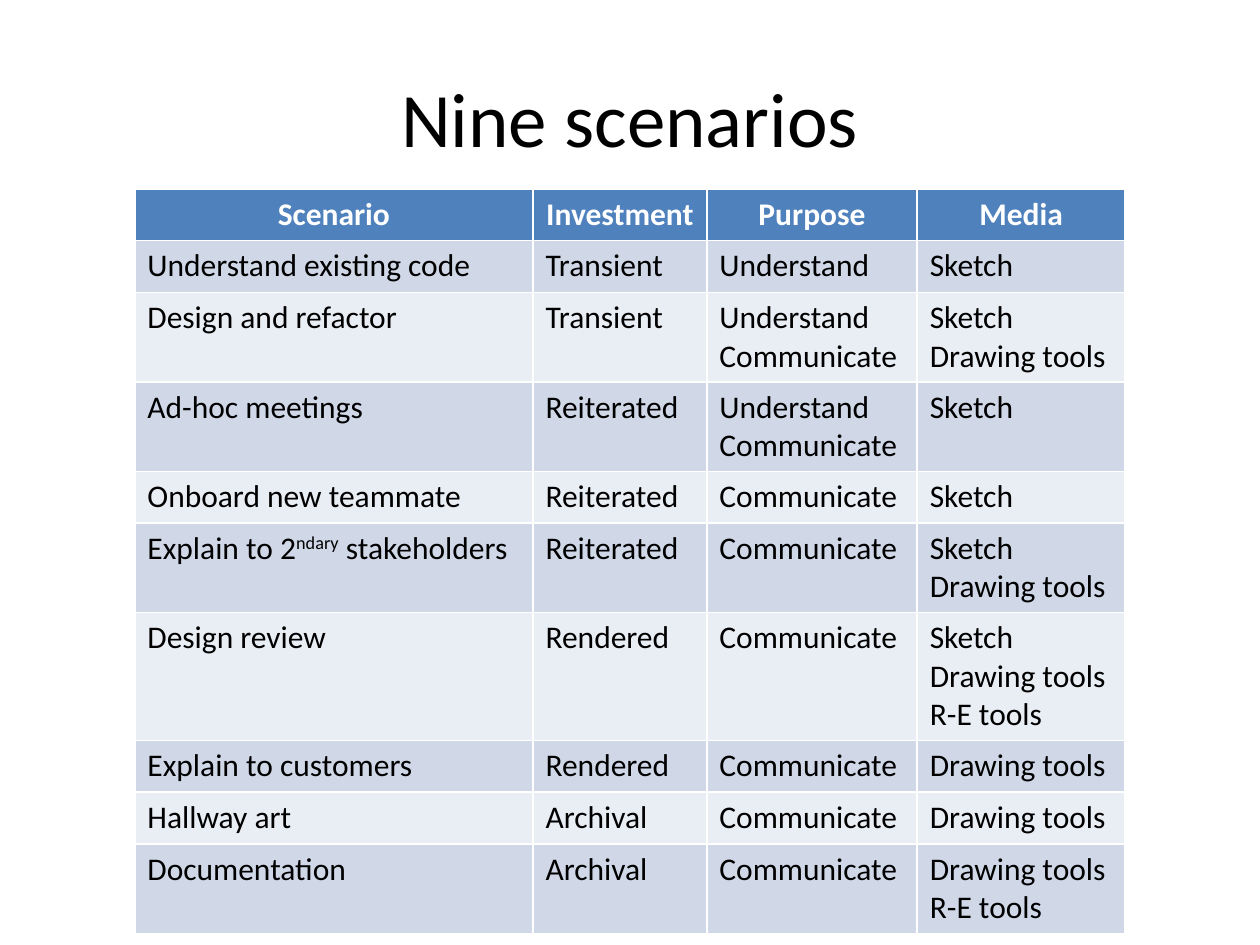
from pptx import Presentation
from pptx import util as u
from pptx.dml.color import RGBColor
from pptx.enum import text

FONT = "Calibri"
BLACK, WHITE, HEADER_FILL = "000000", "FFFFFF", "4F81BD"
BAND_FILLS = ("D0D8E8", "E9EDF4")
COLUMN_WIDTHS = (3.16, 1.38, 1.67, 1.65)
ROW_HEIGHT = 0.41

# "\n" starts a paragraph, "\v" breaks a line, "^" encloses superscript
HEADERS = ("Scenario", "Investment", "Purpose", "Media")
SCENARIOS = (
    ("Understand existing code", "Transient", "Understand", "Sketch"),
    ("Design and refactor", "Transient", "Understand\nCommunicate", "Sketch\vDrawing tools"),
    ("Ad-hoc meetings", "Reiterated", "Understand\nCommunicate", "Sketch"),
    ("Onboard new teammate", "Reiterated", "Communicate", "Sketch"),
    ("Explain to 2^ndary^ stakeholders", "Reiterated", "Communicate", "Sketch\nDrawing tools"),
    ("Design review", "Rendered", "Communicate", "Sketch\nDrawing tools\nR-E tools"),
    ("Explain to customers", "Rendered", "Communicate", "Drawing tools"),
    ("Hallway art", "Archival", "Communicate", "Drawing tools"),
    ("Documentation", "Archival", "Communicate", "Drawing tools\nR-E tools"),
)


def rgb(value):
    return RGBColor.from_string(value)


def style_paragraph(paragraph, size, color, bold=False, centered=False):
    font = paragraph.font
    font.name, font.size, font.bold = FONT, u.Pt(size), bold
    font.color.rgb = rgb(color)
    paragraph.alignment = text.PP_ALIGN.CENTER if centered else text.PP_ALIGN.LEFT


def add_superscript_runs(paragraph, content):
    paragraph.clear()
    for index, part in enumerate(content.split("^")):
        run = paragraph.add_run()
        run.text = part
        if index % 2:
            run._r.get_or_add_rPr().set("baseline", "30000")


def fill_cell(cell, content, fill, color, header):
    cell.fill.solid()
    cell.fill.fore_color.rgb = rgb(fill)
    cell.text_frame.text = content
    for paragraph in cell.text_frame.paragraphs:
        if "^" in paragraph.text:
            add_superscript_runs(paragraph, paragraph.text)
        style_paragraph(paragraph, 18, color, bold=header, centered=header)


def add_title(slide, content):
    title = slide.shapes.title
    title.left, title.top = u.Inches(0.5), u.Inches(0.3)
    title.width, title.height = u.Inches(9), u.Inches(1.25)
    title.text_frame.text = content
    title.text_frame.vertical_anchor = text.MSO_ANCHOR.MIDDLE
    style_paragraph(title.text_frame.paragraphs[0], 44, BLACK, centered=True)


def add_scenario_table(slide):
    rows = (HEADERS,) + SCENARIOS
    # The default table style supplies the white cell borders
    table = slide.shapes.add_table(
        len(rows), len(HEADERS), u.Inches(1.07), u.Inches(1.5),
        u.Inches(sum(COLUMN_WIDTHS)), u.Inches(ROW_HEIGHT * len(rows))).table
    for column, width in zip(table.columns, COLUMN_WIDTHS):
        column.width = u.Inches(width)
    for row_index, row in enumerate(rows):
        header = row_index == 0
        fill = HEADER_FILL if header else BAND_FILLS[(row_index - 1) % 2]
        color = WHITE if header else BLACK
        for column_index, content in enumerate(row):
            fill_cell(table.cell(row_index, column_index), content, fill, color, header)


def main():
    presentation = Presentation()
    presentation.slide_width, presentation.slide_height = u.Inches(10), u.Inches(7.5)
    slide = presentation.slides.add_slide(presentation.slide_layouts[5])
    add_title(slide, "Nine scenarios")
    add_scenario_table(slide)
    presentation.save("out.pptx")


if __name__ == "__main__":
    main()
